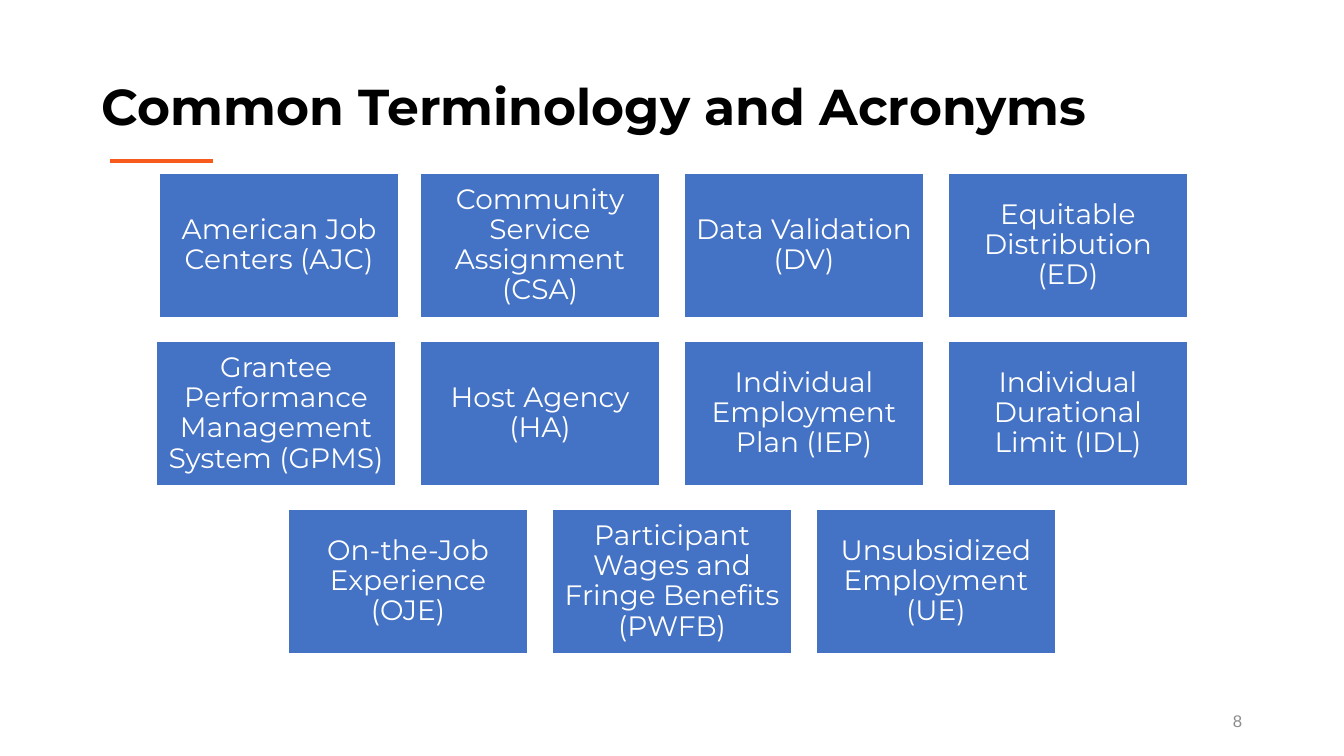
from dataclasses import dataclass

from lxml import etree
from pptx import Presentation
from pptx.dml.color import RGBColor
from pptx.enum.shapes import MSO_CONNECTOR, MSO_SHAPE
from pptx.enum.text import MSO_ANCHOR, MSO_AUTO_SIZE, PP_ALIGN
from pptx.oxml.ns import qn
from pptx.slide import Slide
from pptx.text.text import TextFrame
from pptx.util import Inches, Pt

RECTANGLE = MSO_SHAPE.RECTANGLE
STRAIGHT = MSO_CONNECTOR.STRAIGHT
MIDDLE = MSO_ANCHOR.MIDDLE
NO_AUTOFIT = MSO_AUTO_SIZE.NONE
LEFT, CENTER, RIGHT = PP_ALIGN.LEFT, PP_ALIGN.CENTER, PP_ALIGN.RIGHT

COLORS = {
    "title": "000000",
    "accent": "F75A1C",
    "card": "4472C4",
    "white": "FFFFFF",
    "number": "8C8C8C",
}
SLIDE_WIDTH, SLIDE_HEIGHT = 13.33, 7.5
TITLE_ONLY_LAYOUT = 5

CARD_WIDTH, CARD_HEIGHT = 2.38, 1.43
CARD_GAP = CARD_WIDTH / 10
CARDS_TOP = 1.72
CARD_INSET = 0.08


@dataclass(frozen=True)
class Term:
    text: str
    shift: float = 0


@dataclass(frozen=True)
class TextStyle:
    font: dict
    color: str
    alignment: PP_ALIGN
    line_spacing: float = 1.0
    inset: float | None = None


TITLE_STYLE = TextStyle(
    {"name": "Montserrat", "size": Pt(36), "bold": True}, "title", LEFT, 0.9
)
CARD_STYLE = TextStyle(
    {"name": "Montserrat", "size": Pt(20)}, "white", CENTER, 0.9, CARD_INSET
)
NUMBER_STYLE = TextStyle({"name": "Arial", "size": Pt(12)}, "number", RIGHT)

TERM_ROWS = [
    [
        Term("American Job Centers (AJC)", shift=0.03),
        Term("Community Service Assignment (CSA)"),
        Term("Data Validation (DV)"),
        Term("Equitable Distribution (ED)"),
    ],
    [
        Term("Grantee Performance Management System (GPMS)"),
        Term("Host Agency (HA)"),
        Term("Individual Employment Plan (IEP)"),
        Term("Individual Durational Limit (IDL)"),
    ],
    [
        Term("On-the-Job Experience (OJE)"),
        Term("Participant Wages and Fringe Benefits (PWFB)"),
        Term("Unsubsidized Employment (UE)"),
    ],
]


def rgb(name: str) -> RGBColor:
    return RGBColor.from_string(COLORS[name])


def write_text(frame: TextFrame, text: str, style: TextStyle) -> None:
    frame_format = {
        "word_wrap": True,
        "auto_size": NO_AUTOFIT,
        "vertical_anchor": MIDDLE,
    }
    if style.inset is not None:
        for side in ("left", "top", "right", "bottom"):
            frame_format[f"margin_{side}"] = Inches(style.inset)
    for attribute, value in frame_format.items():
        setattr(frame, attribute, value)

    paragraph = frame.paragraphs[0]
    paragraph.alignment = style.alignment
    paragraph.line_spacing = style.line_spacing
    run = paragraph.add_run()
    run.text = text
    for attribute, value in style.font.items():
        setattr(run.font, attribute, value)
    run.font.color.rgb = rgb(style.color)


def add_title(slide: Slide, text: str) -> None:
    title = slide.shapes.title
    position = {"left": 0.91, "top": 0.56, "width": 11.5, "height": 1.05}
    for attribute, value in position.items():
        setattr(title, attribute, Inches(value))
    write_text(title.text_frame, text, TITLE_STYLE)


def add_accent_line(slide: Slide) -> None:
    connector = slide.shapes.add_connector(
        STRAIGHT, Inches(1.09), Inches(1.6), Inches(2.11), Inches(1.6)
    )
    connector.line.color.rgb = rgb("accent")
    connector.line.width = Pt(3)
    etree.SubElement(connector._element.spPr, qn("a:effectLst"))


def add_card(slide: Slide, term: Term, left: float, top: float) -> None:
    shape = slide.shapes.add_shape(
        RECTANGLE,
        Inches(left + term.shift),
        Inches(top),
        Inches(CARD_WIDTH),
        Inches(CARD_HEIGHT),
    )
    shape.shadow.inherit = False
    shape.fill.solid()
    shape.fill.fore_color.rgb = rgb("card")
    shape.line.color.rgb = rgb("white")
    shape.line.width = Pt(1)
    write_text(shape.text_frame, term.text, CARD_STYLE)


def add_cards(slide: Slide) -> None:
    for row, terms in enumerate(TERM_ROWS):
        row_width = len(terms) * (CARD_WIDTH + CARD_GAP) - CARD_GAP
        row_left = (SLIDE_WIDTH - row_width) / 2
        top = CARDS_TOP + row * (CARD_HEIGHT + CARD_GAP)
        for column, term in enumerate(terms):
            add_card(slide, term, row_left + column * (CARD_WIDTH + CARD_GAP), top)


def add_slide_number(slide: Slide, number: str) -> None:
    box = slide.shapes.add_textbox(Inches(9.42), Inches(6.95), Inches(3), Inches(0.4))
    write_text(box.text_frame, number, NUMBER_STYLE)


def main() -> None:
    presentation = Presentation()
    presentation.slide_width = Inches(SLIDE_WIDTH)
    presentation.slide_height = Inches(SLIDE_HEIGHT)
    slide = presentation.slides.add_slide(
        presentation.slide_layouts[TITLE_ONLY_LAYOUT]
    )
    add_accent_line(slide)
    add_title(slide, "Common Terminology and Acronyms")
    add_slide_number(slide, "8")
    add_cards(slide)
    presentation.save("out.pptx")


if __name__ == "__main__":
    main()
